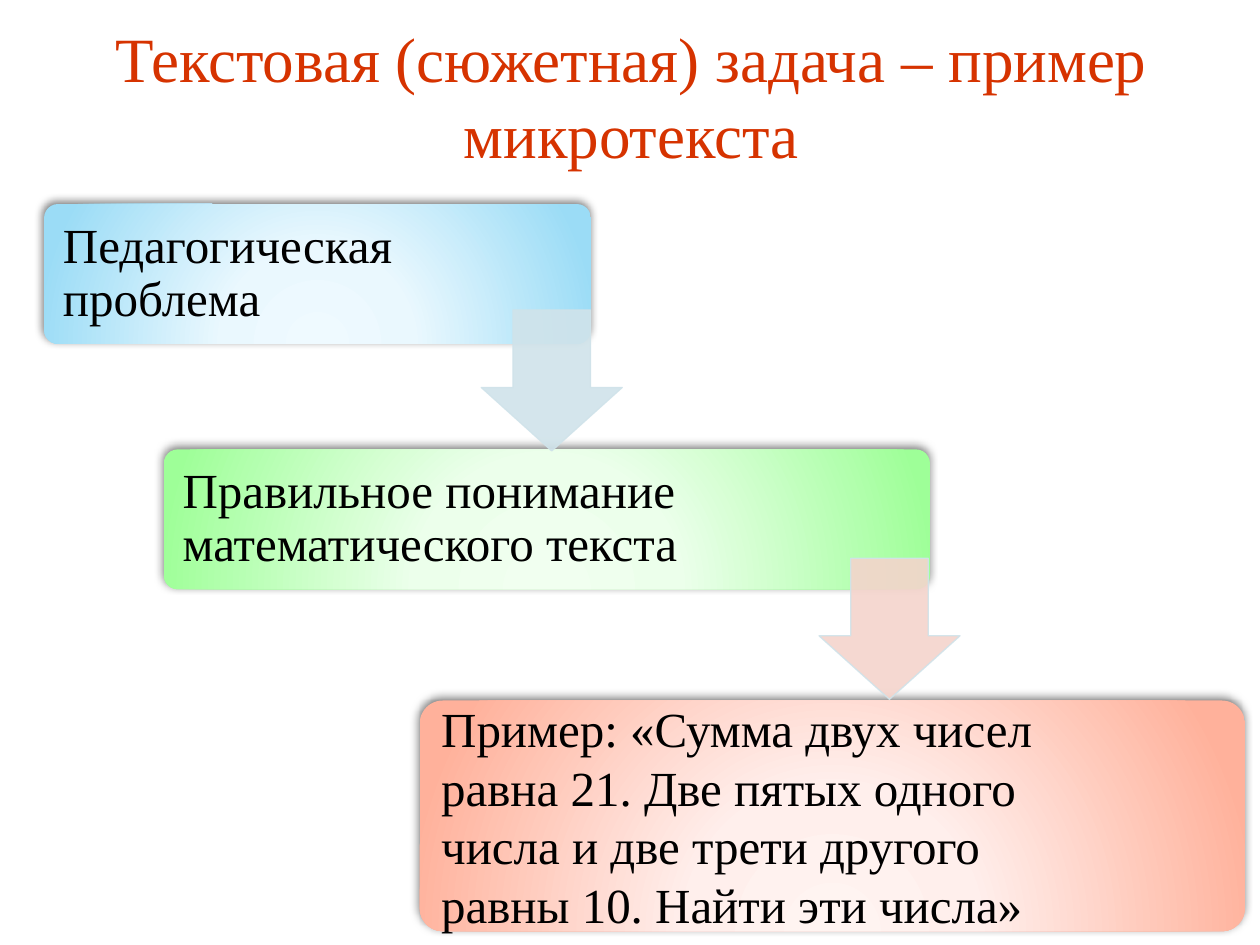
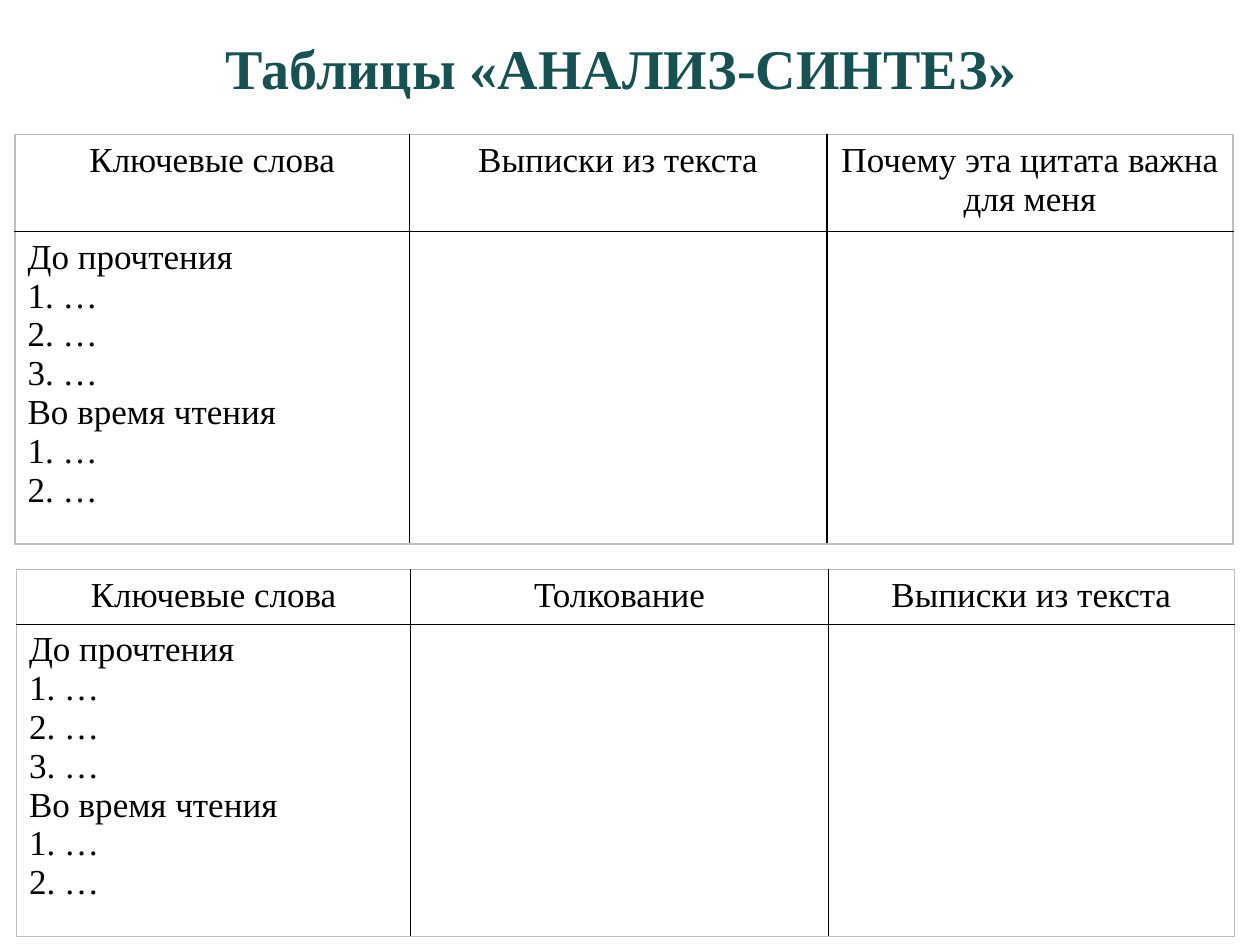
"""Builds two slides on working with mathematical texts."""
import pptx
import pptx.util
import pptx.dml.color
import pptx.enum.shapes
import pptx.enum.text
import pptx.oxml
import pptx.oxml.ns

Pt = pptx.util.Pt
SHAPE = pptx.enum.shapes.MSO_SHAPE
ALIGN = pptx.enum.text.PP_ALIGN
ANCHOR = pptx.enum.text.MSO_ANCHOR
FONT = "Times New Roman"
BLACK, EDGE_GREY = "000000", "BFBFBF"
NAMESPACE = pptx.oxml.ns.nsdecls("a")

PROBLEM_TITLE = "Текстовая (сюжетная) задача – пример микротекста"
STEPS = [
    dict(text="Педагогическая проблема", frame=(25.2, 116.6, 312.5, 79.9),
         text_width=239.8, spacing=0.9, colors=("EFFAFF", "EAF8FE", "9BDCF6")),
    dict(text="Правильное понимание математического текста",
         frame=(93.6, 256.8, 437.8, 79.9), text_width=333.4, spacing=0.9,
         colors=("F1FFF0", "ECFFEB", "9EFF98")),
    dict(text="Пример: «Сумма двух чисел равна 21. Две пятых одного числа "
              "и две трети другого равны 10. Найти эти числа»",
         frame=(239.8, 400.3, 471.6, 131.8), text_width=357.1, spacing=None,
         colors=("FFF4F1", "FFEFEC", "FFB19B")),
]
ARROWS = [(275, 177.1, "D0E3EA"), (468, 319, "F4D4CC")]
ARROW_SIZE, ARROW_EDGE = 80.6, "D0E3EA"

TABLES_TITLE = "Таблицы «АНАЛИЗ-СИНТЕЗ»"
KEYWORDS = ["До прочтения", "1. …", "2. …", "3. …",
            "Во время чтения", "1. …", "2. …"]
COLUMN_WIDTHS = (225.4, 238.5, 232.2)
BODY_HEIGHT = 178.6
TABLES = [
    dict(left=8.6, top=77, head_height=55.4, line=1,
         heads=["Ключевые слова", "Выписки из текста",
                "Почему эта цитата важна для меня"]),
    dict(left=9.4, top=325.4, head_height=31, line=0.5,
         heads=["Ключевые слова", "Толкование", "Выписки из текста"]),
]


def rgb(color):
    return pptx.dml.color.RGBColor.from_string(color)


def add_span(para, text, size, color=BLACK, bold=False):
    span = para.add_run()
    span.text = text
    span.font.name, span.font.size, span.font.bold = FONT, Pt(size), bold
    span.font.color.rgb = rgb(color)


def add_text(shapes, frame, text, size, color=BLACK, bold=False,
             align=ALIGN.LEFT, margins=(7.2, 3.6), spacing=None):
    box = shapes.add_textbox(*map(Pt, frame))
    body = box.text_frame
    body.word_wrap, body.vertical_anchor = True, ANCHOR.MIDDLE
    body.margin_left = body.margin_right = Pt(margins[0])
    body.margin_top = body.margin_bottom = Pt(margins[1])
    para = body.paragraphs[0]
    para.alignment = align
    if spacing:
        para.line_spacing = spacing
    add_span(para, text, size, color, bold)


def add_title(page, frame, text, size, color, bold=False):
    add_text(page.shapes, frame, text, size, color, bold, ALIGN.CENTER)


def add_step(shapes, step):
    left, top, width, height = step["frame"]
    card = shapes.add_shape(SHAPE.ROUNDED_RECTANGLE, *map(Pt, step["frame"]))
    card.adjustments[0] = 0.1
    card.line.fill.background()
    card.shadow.inherit = False
    properties = card._element.spPr
    stops = "".join(
        f'<a:gs pos="{place * 1000}"><a:srgbClr val="{color}"/></a:gs>'
        for place, color in zip((0, 34, 100), step["colors"]))
    properties.insert(2, pptx.oxml.parse_xml(
        f'<a:gradFill {NAMESPACE} rotWithShape="1"><a:gsLst>{stops}</a:gsLst>'
        '<a:path path="circle"><a:fillToRect l="50000" t="155000" '
        'r="50000" b="-55000"/></a:path></a:gradFill>'))
    properties.find(pptx.oxml.ns.qn("a:effectLst")).append(pptx.oxml.parse_xml(
        f'<a:outerShdw {NAMESPACE} blurRad="{Pt(5)}" dist="{Pt(2)}" '
        f'dir="{245 * 60000}" rotWithShape="0"><a:srgbClr val="{BLACK}">'
        '<a:alpha val="50000"/></a:srgbClr></a:outerShdw>'))
    inset = 0.03 * height
    frame = (left + inset, top + inset, step["text_width"], height - 2 * inset)
    add_text(shapes, frame, step["text"], 28, margins=(8.4, 8.4),
             spacing=step["spacing"])


def add_arrow(shapes, left, top, color):
    arrow = shapes.add_shape(SHAPE.DOWN_ARROW, Pt(left), Pt(top),
                             Pt(ARROW_SIZE), Pt(ARROW_SIZE))
    arrow.adjustments[0], arrow.adjustments[1] = 0.55, 0.45
    arrow.shadow.inherit = False
    arrow.fill.solid()
    arrow.fill.fore_color.rgb = rgb(color)
    arrow.line.color.rgb = rgb(ARROW_EDGE)
    arrow.line.width = Pt(0.75)
    for tint in arrow._element.spPr.iter(pptx.oxml.ns.qn("a:srgbClr")):
        tint.append(pptx.oxml.parse_xml(f'<a:alpha {NAMESPACE} val="90000"/>'))


def set_borders(cell, width, outer):
    properties = cell._tc.get_or_add_tcPr()
    for index, side in enumerate("LRTB"):
        color = EDGE_GREY if side in outer else BLACK
        properties.insert(index, pptx.oxml.parse_xml(
            f'<a:ln{side} {NAMESPACE} w="{Pt(width)}"><a:solidFill>'
            f'<a:srgbClr val="{color}"/></a:solidFill></a:ln{side}>'))


def add_reading_table(page, data):
    heights = (data["head_height"], BODY_HEIGHT)
    table = page.shapes.add_table(
        2, 3, Pt(data["left"]), Pt(data["top"]),
        Pt(sum(COLUMN_WIDTHS)), Pt(sum(heights))).table
    table.first_row = table.horz_banding = False
    for column, width in zip(table.columns, COLUMN_WIDTHS):
        column.width = Pt(width)
    rows = [[[head] for head in data["heads"]], [KEYWORDS, [], []]]
    for row_index, row in enumerate(rows):
        table.rows[row_index].height = Pt(heights[row_index])
        for column_index, lines in enumerate(row):
            cell = table.cell(row_index, column_index)
            cell.fill.background()
            outer = "TB"[row_index] + ("L", "", "R")[column_index]
            set_borders(cell, data["line"], outer)
            for index, line in enumerate(lines):
                body = cell.text_frame
                para = body.add_paragraph() if index else body.paragraphs[0]
                para.alignment = ALIGN.LEFT if row_index else ALIGN.CENTER
                add_span(para, line, 20)


def main():
    deck = pptx.Presentation()
    deck.slide_width, deck.slide_height = Pt(720), Pt(540)
    blank = deck.slide_layouts[6]

    page = deck.slides.add_slide(blank)
    add_title(page, (36.7, 9.4, 648, 90), PROBLEM_TITLE, 36, "D63300")
    diagram = page.shapes.add_group_shape().shapes
    for step in STEPS:
        add_step(diagram, step)
    for arrow in ARROWS:
        add_arrow(diagram, *arrow)

    page = deck.slides.add_slide(blank)
    add_title(page, (31, 9.4, 648, 57.6), TABLES_TITLE, 32, "175151", True)
    for data in TABLES:
        add_reading_table(page, data)

    deck.save("out.pptx")


if __name__ == "__main__":
    main()
